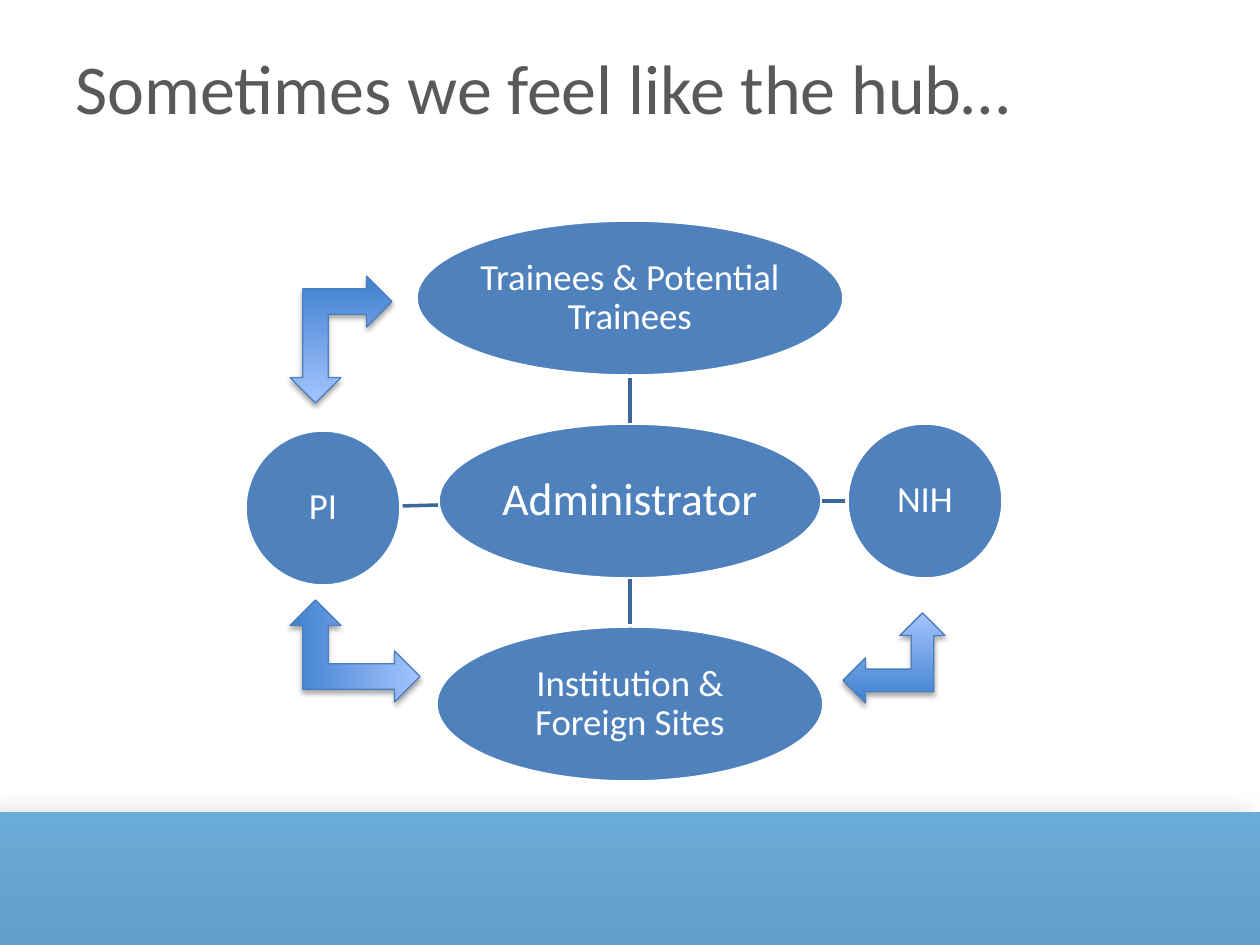
"""Builds the hub slide: an administrator linked to four parties."""
from lxml.etree import SubElement
from pptx import Presentation
from pptx.dml.color import RGBColor
from pptx.enum.shapes import MSO_CONNECTOR as LINK, MSO_SHAPE as SHAPE
from pptx.enum.text import MSO_ANCHOR as ANCHOR, MSO_AUTO_SIZE as FIT, PP_ALIGN as ALIGN
from pptx.oxml.ns import qn
from pptx.util import Emu, Pt

COLORS = {
    "title": "595959", "text": "FFFFFF", "edge": "FFFFFF", "node": "4F81BD", "link": "3F6797",
    "bar_top": "6BABD8", "bar_bottom": "639EC8", "bar_shadow": "BFBFBF",
    "arrow_dark": "3F80CE", "arrow_light": "A4C4FF", "arrow_edge": "4B7EBC", "arrow_shadow": "000000",
}
HUB_X, HUB_Y, ROW_GAP, NODE_HEIGHT = 630, 501, 203, 156


class HubSlide:
    scale = 914400 / 126
    font = "Calibri"

    def __init__(self, deck):
        self.page = deck.slides.add_slide(deck.slide_layouts[5])

    @classmethod
    def px(cls, *lengths):
        return [Emu(round(length * cls.scale)) for length in lengths]

    @staticmethod
    def color(name):
        return RGBColor.from_string(COLORS[name])

    @staticmethod
    def apply(target, values):
        for name, value in values.items():
            setattr(target, name, value)

    def put_text(self, shape, text, size, color, frame_format, para_format):
        frame = shape.text_frame
        self.apply(frame, {"word_wrap": True, "auto_size": FIT.NONE, **frame_format})
        para = frame.paragraphs[0]
        self.apply(para, para_format)
        span = para.add_run()
        span.text = text
        self.apply(span.font, {"name": self.font, "size": Pt(size)})
        span.font.color.rgb = self.color(color)

    def title(self, text, *bounds):
        box = self.page.shapes.title
        self.apply(box, dict(zip(("left", "top", "width", "height"), self.px(*bounds))))
        self.put_text(box, text, 40, "title", {"vertical_anchor": ANCHOR.TOP}, {"alignment": ALIGN.LEFT})

    def shape(self, kind, bounds, edge=None, weight=0):
        shape = self.page.shapes.add_shape(kind, *self.px(*bounds))
        shape.shadow.inherit = False
        if edge:
            shape.line.color.rgb = self.color(edge)
            shape.line.width = Pt(weight)
        else:
            shape.line.fill.background()
        return shape

    def gradient(self, shape, colors, angle):
        shape.fill.gradient()
        shape.fill.gradient_angle = angle
        for stop, position, color in zip(shape.fill.gradient_stops, (0, 1), colors):
            stop.position = position
            stop.color.rgb = self.color(color)

    def shadow(self, shape, color, alpha, blur, distance, direction):
        effects = shape._element.spPr.find(qn("a:effectLst"))
        outer = SubElement(effects, qn("a:outerShdw"), blurRad=str(Pt(blur)), dist=str(Pt(distance)),
                           dir=str(direction * 60000), rotWithShape="0")
        tint = SubElement(outer, qn("a:srgbClr"), val=COLORS[color])
        SubElement(tint, qn("a:alpha"), val=str(alpha * 1000))

    def bar(self, *bounds):
        bar = self.shape(SHAPE.RECTANGLE, bounds)
        self.gradient(bar, ("bar_top", "bar_bottom"), 270)
        self.shadow(bar, "bar_shadow", 43, 10.8, 7, 197)

    def node(self, text, x, y, width, size=21):
        bounds = (x - width / 2, y - NODE_HEIGHT / 2, width, NODE_HEIGHT)
        node = self.shape(SHAPE.OVAL, bounds, "edge", 2)
        node.fill.solid()
        node.fill.fore_color.rgb = self.color("node")
        inset = self.px(1)[0]
        margins = {f"margin_{side}": inset for side in ("left", "top", "right", "bottom")}
        self.put_text(node, text, size, "text", {"vertical_anchor": ANCHOR.MIDDLE, **margins},
                      {"alignment": ALIGN.CENTER, "line_spacing": 0.9})

    def link(self, *ends):
        link = self.page.shapes.add_connector(LINK.STRAIGHT, *self.px(*ends))
        link.line.color.rgb = self.color("link")
        link.line.width = Pt(2)
        SubElement(link._element.spPr, qn("a:effectLst"))

    def arrow(self, bounds, rotation):
        arrow = self.shape(SHAPE.LEFT_UP_ARROW, bounds, "arrow_edge", 0.75)
        arrow.rotation = rotation
        self.gradient(arrow, ("arrow_dark", "arrow_light"), 90)
        self.shadow(arrow, "arrow_shadow", 35, 3.1, 1.8, 90)


def main():
    deck = Presentation()
    deck.slide_width, deck.slide_height = HubSlide.px(1260, 945)
    slide = HubSlide(deck)
    slide.bar(0, 812, 1260, 133)
    slide.title("Sometimes we feel like the hub…", 63, 38, 1134, 157)

    half = NODE_HEIGHT // 2
    upper, lower = HUB_Y - ROW_GAP, HUB_Y + ROW_GAP
    slide.node("Administrator", HUB_X, HUB_Y, 384, 26)
    for ends, node in (
        ((HUB_X, HUB_Y - half, HUB_X, upper + half), ("Trainees & Potential Trainees", HUB_X, upper, 428)),
        ((822, HUB_Y, 847, HUB_Y), ("NIH", 925, HUB_Y, NODE_HEIGHT)),
        ((HUB_X, HUB_Y + half, HUB_X, lower - half), ("Institution & Foreign Sites", HUB_X, lower, 388)),
        ((438, 505, 401, 506), ("PI", 323, 508, NODE_HEIGHT)),
    ):
        slide.link(*ends)
        slide.node(*node)

    for bounds, rotation in (
        ((304, 586, 102, 130), 90),
        ((843, 613, 102, 90), 0),
        ((290, 276, 102, 127), 180),
    ):
        slide.arrow(bounds, rotation)
    deck.save("out.pptx")


if __name__ == "__main__":
    main()
